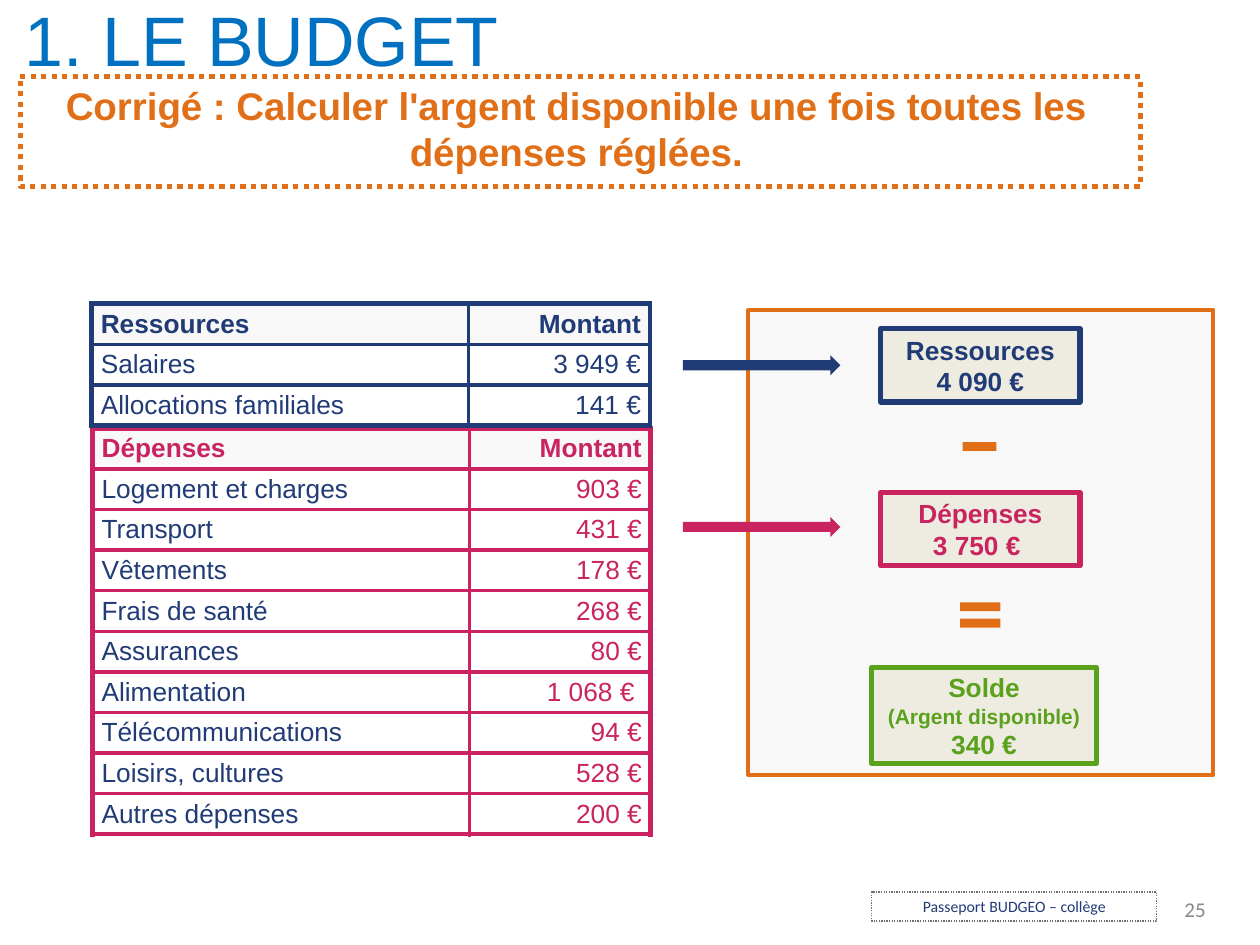
"""Build the corrected family budget slide."""
from dataclasses import dataclass
from typing import Optional

import lxml.etree
import pptx
import pptx.dml.color
import pptx.enum.dml
import pptx.enum.shapes
import pptx.enum.text
import pptx.oxml.ns
import pptx.util

Pt = pptx.util.Pt
Align = pptx.enum.text.PP_ALIGN
Anchor = pptx.enum.text.MSO_ANCHOR
Preset = pptx.enum.shapes.MSO_SHAPE


@dataclass(frozen=True)
class Theme:
    title: str = "0070C0"
    navy: str = "213B76"
    pink: str = "C92360"
    pink_border: str = "CB2361"
    green: str = "5AA11C"
    orange: str = "E06F17"
    panel: str = "F8F8F8"
    card: str = "EEECE1"
    number: str = "888888"
    footer_line: str = "726F6D"
    font: str = "Arial"
    small_font: str = "Calibri"
    title_size: float = 40
    banner_size: float = 22
    body_size: float = 15
    note_size: float = 12
    footer_size: float = 9
    outer_line: float = 3
    inner_line: float = 2.25
    thin_line: float = 0.75


THEME = Theme()


@dataclass(frozen=True)
class Area:
    left: float
    top: float
    width: float
    height: float

    def lengths(self) -> tuple:
        return tuple(Pt(value) for value in (self.left, self.top, self.width, self.height))


@dataclass(frozen=True)
class Style:
    color: str
    size: float = THEME.body_size
    bold: bool = False
    font: str = THEME.font
    align: Align = Align.CENTER


@dataclass(frozen=True)
class Ledger:
    area: Area
    rows: tuple
    heading_color: str
    amount_color: str
    border: str


@dataclass(frozen=True)
class Card:
    area: Area
    lines: tuple
    color: str
    sizes: tuple = (THEME.body_size, THEME.body_size)


LEDGERS = (
    Ledger(Area(52.9, 244.8, 319, 234), (
        ("Dépenses", "Montant"), ("Logement et charges", "903 €"), ("Transport", "431 €"),
        ("Vêtements", "178 €"), ("Frais de santé", "268 €"), ("Assurances", "80 €"),
        ("Alimentation", "1 068 € "), ("Télécommunications", "94 €"),
        ("Loisirs, cultures", "528 €"), ("Autres dépenses", "200 €"),
    ), THEME.pink, THEME.pink, THEME.pink_border),
    Ledger(Area(52.4, 173.6, 319, 69.8), (
        ("Ressources", "Montant"), ("Salaires", "3 949 €"), ("Allocations familiales", "141 €"),
    ), THEME.navy, THEME.navy, THEME.navy),
)
CARDS = (
    Card(Area(503.3, 187.9, 113.8, 41.8), ("Ressources", "4 090 €"), THEME.navy),
    Card(Area(503.3, 281.5, 113.8, 41.8), ("Dépenses", "3 750 € "), THEME.pink),
    Card(Area(498.2, 381.6, 128.2, 54.7), ("Solde", "(Argent disponible)", "340 €"), THEME.green,
         (THEME.body_size, THEME.note_size, THEME.body_size)),
)
ARROWS = ((Area(390.2, 203, 90, 11.5), THEME.navy), (Area(390.2, 295.4, 90, 11.5), THEME.pink))


def rgb(color: str) -> pptx.dml.color.RGBColor:
    return pptx.dml.color.RGBColor.from_string(color)


def format_text(frame, style: Style, sizes: tuple = ()) -> None:
    for index, para in enumerate(frame.paragraphs):
        para.alignment = style.align
        for span in para.runs:
            span.font.name = style.font
            span.font.size = Pt(sizes[index] if sizes else style.size)
            span.font.bold = style.bold
            span.font.color.rgb = rgb(style.color)


def set_frame(frame, horizontal: float, vertical: float, anchor: Anchor = Anchor.MIDDLE,
              wrap: bool = True) -> None:
    frame.margin_left = frame.margin_right = Pt(horizontal)
    frame.margin_top = frame.margin_bottom = Pt(vertical)
    frame.vertical_anchor = anchor
    frame.word_wrap = wrap


def paint(shape, fill: Optional[str], line: Optional[str], width: float, dotted: bool) -> None:
    shape.shadow.inherit = False
    if fill:
        shape.fill.solid()
        shape.fill.fore_color.rgb = rgb(fill)
    else:
        shape.fill.background()
    if line:
        shape.line.color.rgb = rgb(line)
        shape.line.width = Pt(width)
        if dotted:
            shape.line.dash_style = pptx.enum.dml.MSO_LINE.ROUND_DOT
    else:
        shape.line.fill.background()


def add_box(page, preset: Preset, area: Area, fill: Optional[str] = None,
            line: Optional[str] = None, width: float = THEME.outer_line, dotted: bool = False):
    box = page.shapes.add_shape(preset, *area.lengths())
    if preset == Preset.ROUNDED_RECTANGLE:
        box.adjustments[0] = 0
    paint(box, fill, line, width, dotted)
    return box


def add_border(cell, side: str, color: str, width: float) -> None:
    qn = pptx.oxml.ns.qn
    properties = cell._tc.get_or_add_tcPr()
    border = lxml.etree.SubElement(properties, qn("a:ln" + side), w=str(Pt(width)))
    fill = lxml.etree.SubElement(border, qn("a:solidFill"))
    lxml.etree.SubElement(fill, qn("a:srgbClr"), val=color)


def add_ledger(page, ledger: Ledger) -> None:
    count = len(ledger.rows)
    holder = page.shapes.add_table(count, 2, *ledger.area.lengths())
    table = holder.table
    table.first_row = table.horz_banding = False
    for column, width in zip(table.columns, (215.3, 103.7)):
        column.width = Pt(width)
    for row_index, texts in enumerate(ledger.rows):
        table.rows[row_index].height = Pt(20.2)
        heading = row_index == 0
        for column_index, text in enumerate(texts):
            cell = table.cell(row_index, column_index)
            edges = {"L": column_index == 0, "R": column_index == 1,
                     "T": heading, "B": row_index == count - 1}
            for side, outer in edges.items():
                add_border(cell, side, ledger.border, THEME.outer_line if outer else THEME.inner_line)
            if heading:
                cell.fill.solid()
                cell.fill.fore_color.rgb = rgb(THEME.panel)
            else:
                cell.fill.background()
            cell.margin_left = cell.margin_right = Pt(5.2)
            cell.margin_top = cell.margin_bottom = Pt(2.6)
            cell.vertical_anchor = Anchor.MIDDLE
            label_color = ledger.heading_color if heading else THEME.navy
            color = ledger.amount_color if column_index else label_color
            cell.text_frame.text = text
            format_text(cell.text_frame, Style(
                color, bold=heading, align=Align.RIGHT if column_index else Align.LEFT))
    holder.height = Pt(ledger.area.height)


def add_card(page, card: Card) -> None:
    box = add_box(page, Preset.ROUNDED_RECTANGLE, card.area, THEME.card, card.color)
    box.text_frame.text = "\n".join(card.lines)
    set_frame(box.text_frame, 7.2, 3.6)
    format_text(box.text_frame, Style(card.color, bold=True), card.sizes)


def add_equals(page, area: Area, bar: float) -> None:
    right, bottom = area.left + area.width, area.top + area.height
    builder = page.shapes.build_freeform(Pt(area.left), Pt(area.top))
    for top in (area.top, bottom - bar):
        builder.move_to(Pt(area.left), Pt(top))
        corners = ((right, top), (right, top + bar), (area.left, top + bar))
        builder.add_line_segments([(Pt(x), Pt(y)) for x, y in corners], close=True)
    paint(builder.convert_to_shape(), THEME.orange, None, 0, False)


def main() -> None:
    deck = pptx.Presentation()
    deck.slide_width, deck.slide_height = Pt(720), Pt(540)
    page = deck.slides.add_slide(deck.slide_layouts[5])

    title = page.shapes.title
    title.left, title.top, title.width, title.height = Area(-44.6, -5.8, 388.1, 55.4).lengths()
    title.text_frame.text = "1. LE BUDGET"
    set_frame(title.text_frame, 3.6, 3.6)
    format_text(title.text_frame, Style(THEME.title, THEME.title_size))

    number = page.shapes.add_textbox(*Area(673.2, 509, 19.4, 21.6).lengths())
    number.text_frame.text = "25"
    set_frame(number.text_frame, 3.6, 3.6, wrap=False)
    format_text(number.text_frame, Style(
        THEME.number, THEME.note_size, font=THEME.small_font, align=Align.RIGHT))

    for ledger in LEDGERS:
        add_ledger(page, ledger)
    add_box(page, Preset.ROUNDED_RECTANGLE, Area(427.7, 177.1, 265.7, 265.7),
            THEME.panel, THEME.orange, THEME.inner_line)
    for card in CARDS:
        add_card(page, card)
    add_box(page, Preset.RECTANGLE, Area(550.1, 252.7, 19.4, 5), THEME.orange)
    add_equals(page, Area(548.6, 344.2, 23, 14.4), 5)
    for area, color in ARROWS:
        add_box(page, Preset.RIGHT_ARROW, area, color)

    banner = page.shapes.add_textbox(*Area(11.5, 43.9, 635.8, 59).lengths())
    banner.text_frame.text = (
        "Corrigé : Calculer l'argent disponible une fois toutes les dépenses réglées.")
    set_frame(banner.text_frame, 2.9, 2.9, Anchor.TOP)
    banner.text_frame.paragraphs[0].space_before = Pt(5)
    format_text(banner.text_frame, Style(THEME.orange, THEME.banner_size, True))
    add_box(page, Preset.ROUNDED_RECTANGLE, Area(11.5, 43.9, 640.1, 62.6),
            line=THEME.orange, dotted=True)

    footer = add_box(page, Preset.RECTANGLE, Area(498.2, 509.8, 162.7, 16.6),
                     line=THEME.footer_line, width=THEME.thin_line, dotted=True)
    footer.text_frame.text = "Passeport BUDGEO – collège"
    set_frame(footer.text_frame, 5.2, 2.6)
    format_text(footer.text_frame, Style(THEME.navy, THEME.footer_size, font=THEME.small_font))
    deck.save("out.pptx")


if __name__ == "__main__":
    main()
